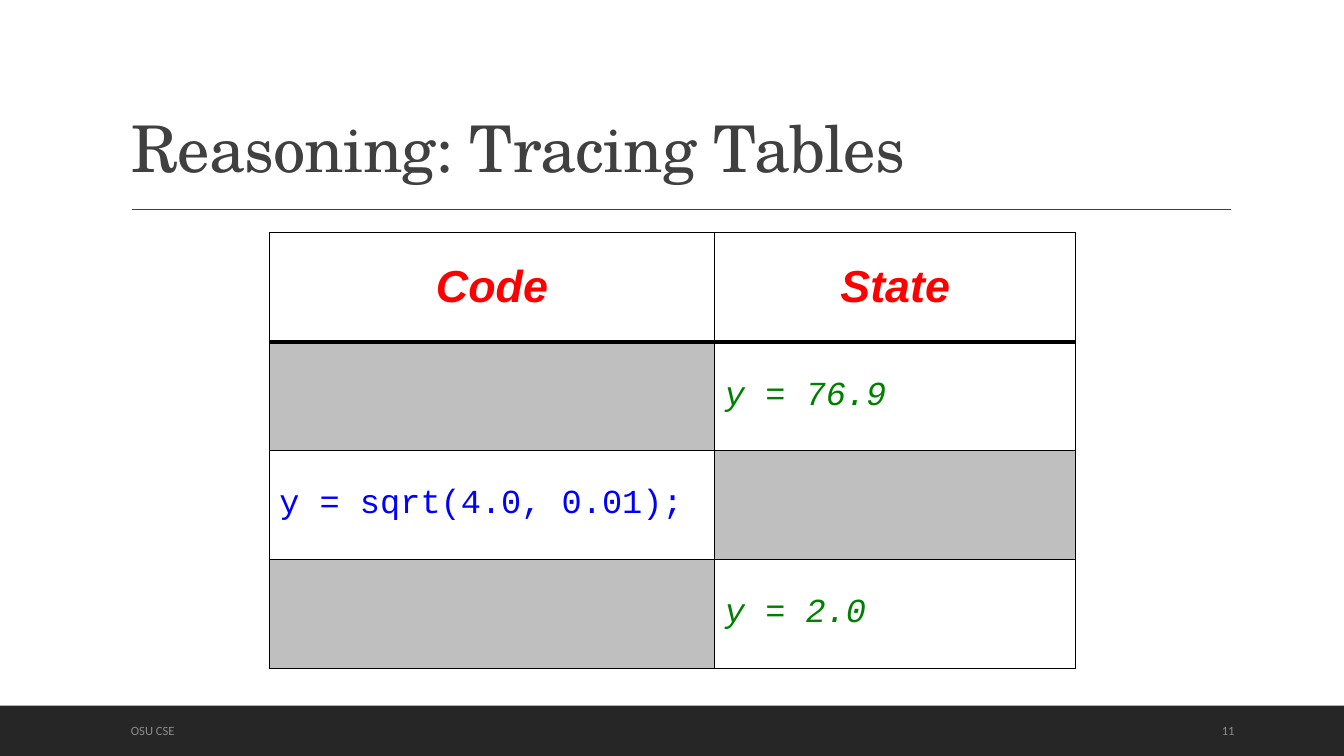
"""Build the tracing table slide."""
from dataclasses import dataclass

from lxml.etree import SubElement
from pptx import Presentation
from pptx.dml.color import RGBColor
from pptx.enum.shapes import MSO_CONNECTOR, MSO_SHAPE
from pptx.enum.text import MSO_ANCHOR, MSO_AUTO_SIZE, PP_ALIGN
from pptx.oxml.ns import qn
from pptx.slide import Slide
from pptx.table import _Cell
from pptx.text.text import TextFrame
from pptx.util import Inches, Pt

COLUMN_WIDTHS = (4.42, 3.58)
ROW_HEIGHT = 1.08
SHADED = "BFBFBF"


@dataclass(frozen=True)
class CellStyle:
    font: str
    size: float
    color: str
    bold: bool = False
    italic: bool = False
    align: PP_ALIGN = PP_ALIGN.LEFT


@dataclass(frozen=True)
class FooterItem:
    text: str
    left: float
    width: float


HEADING = CellStyle("Arial", 32, "FF0000", True, True, PP_ALIGN.CENTER)
CODE = CellStyle("Courier New", 24, "0000FF")
STATE = CellStyle("Courier New", 24, "008000", italic=True)

TRACE_ROWS = (
    (("Code", HEADING), ("State", HEADING)),
    (None, ("y = 76.9", STATE)),
    (("y = sqrt(4.0, 0.01);", CODE), None),
    (None, ("y = 2.0", STATE)),
)
FOOTER_ITEMS = (FooterItem("OSU CSE", 1.2, 7.46), FooterItem("11", 12.02, 0.85))


def rgb(color: str) -> RGBColor:
    return RGBColor.from_string(color)


def write_text(frame: TextFrame, text: str, *, font: str, size: float, color: str,
               bold: bool = False, italic: bool = False,
               align: PP_ALIGN = PP_ALIGN.LEFT, anchor: MSO_ANCHOR = MSO_ANCHOR.MIDDLE,
               line_spacing: float = 1.0, letter_spacing: float = 0) -> None:
    frame.word_wrap = True
    frame.vertical_anchor = anchor
    paragraph = frame.paragraphs[0]
    paragraph.alignment = align
    paragraph.line_spacing = line_spacing
    run = paragraph.add_run()
    run.text = text
    run.font.name = font
    run.font.size = Pt(size)
    run.font.bold = bold
    run.font.italic = italic
    run.font.color.rgb = rgb(color)
    if letter_spacing:
        run.font._element.set("spc", str(round(letter_spacing * 100)))


def set_borders(cell: _Cell, top: float, bottom: float) -> None:
    properties = cell._tc.get_or_add_tcPr()
    for side, width in (("L", 1), ("R", 1), ("T", top), ("B", bottom)):
        border = SubElement(properties, qn(f"a:ln{side}"), w=str(Pt(width)))
        fill = SubElement(border, qn("a:solidFill"))
        SubElement(fill, qn("a:srgbClr"), val="000000")


def add_title(slide: Slide) -> None:
    title = slide.shapes.title
    title.left, title.top = Inches(1.2), Inches(0.31)
    title.width, title.height = Inches(11), Inches(1.59)
    title.text_frame.auto_size = MSO_AUTO_SIZE.NONE
    write_text(title.text_frame, "Reasoning: Tracing Tables", font="TeX Gyre Schola",
               size=46, color="404040", anchor=MSO_ANCHOR.BOTTOM,
               line_spacing=0.9, letter_spacing=-0.5)


def add_title_rule(slide: Slide) -> None:
    rule = slide.shapes.add_connector(MSO_CONNECTOR.STRAIGHT, Inches(1.31), Inches(2.08),
                                      Inches(12.21), Inches(2.08))
    rule.line.color.rgb = rgb("404040")
    rule.line.width = Pt(1)
    SubElement(rule._element.spPr, qn("a:effectLst"))


def add_footer(slide: Slide) -> None:
    band = slide.shapes.add_shape(MSO_SHAPE.RECTANGLE, 0, Inches(7),
                                  Inches(13.33), Inches(0.5))
    band.shadow.inherit = False
    band.fill.solid()
    band.fill.fore_color.rgb = rgb("262626")
    band.line.fill.background()
    for item in FOOTER_ITEMS:
        box = slide.shapes.add_textbox(Inches(item.left), Inches(7.05),
                                       Inches(item.width), Inches(0.4))
        write_text(box.text_frame, item.text, font="Calibri", size=9, color="8C8C8C")


def add_trace_table(slide: Slide) -> None:
    table = slide.shapes.add_table(
        len(TRACE_ROWS), len(COLUMN_WIDTHS), Inches(2.67), Inches(2.31),
        Inches(sum(COLUMN_WIDTHS)), Inches(ROW_HEIGHT * len(TRACE_ROWS))).table
    table.first_row = False
    table.horz_banding = False
    for column, width in zip(table.columns, COLUMN_WIDTHS):
        column.width = Inches(width)
    for row_index, entries in enumerate(TRACE_ROWS):
        table.rows[row_index].height = Inches(ROW_HEIGHT)
        for column_index, entry in enumerate(entries):
            cell = table.cell(row_index, column_index)
            set_borders(cell, top=3 if row_index == 1 else 1,
                        bottom=3 if row_index == 0 else 1)
            if entry is None:
                cell.fill.solid()
                cell.fill.fore_color.rgb = rgb(SHADED)
                continue
            cell.fill.background()
            text, style = entry
            write_text(cell.text_frame, text, font=style.font, size=style.size,
                       color=style.color, bold=style.bold, italic=style.italic,
                       align=style.align)
            cell.vertical_anchor = MSO_ANCHOR.MIDDLE


def main() -> None:
    presentation = Presentation()
    presentation.slide_width = Inches(13.33)
    presentation.slide_height = Inches(7.5)
    slide = presentation.slides.add_slide(presentation.slide_layouts[5])
    add_footer(slide)
    add_title_rule(slide)
    add_title(slide)
    add_trace_table(slide)
    presentation.save("out.pptx")


if __name__ == "__main__":
    main()
